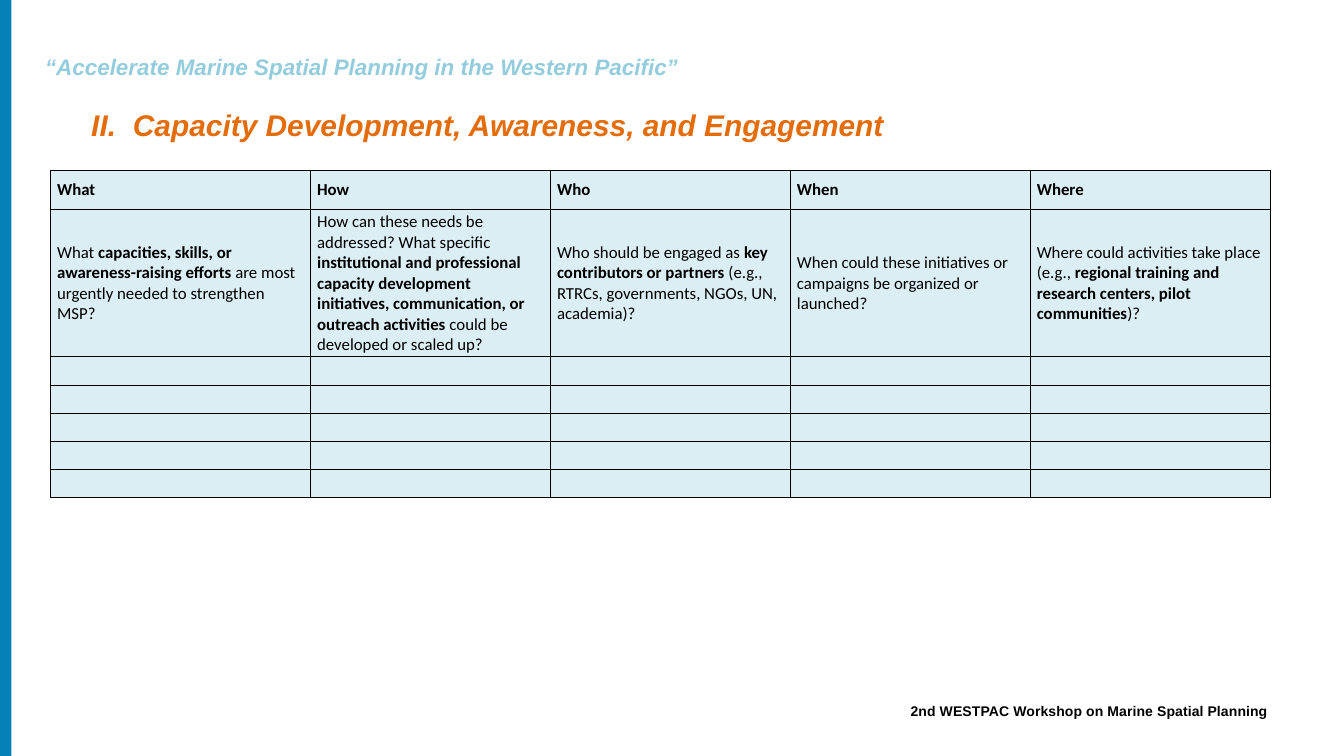
from dataclasses import dataclass

from lxml.etree import SubElement
from pptx import Presentation
from pptx.dml.color import RGBColor
from pptx.enum.shapes import MSO_SHAPE
from pptx.enum.text import MSO_ANCHOR, MSO_AUTO_SIZE, PP_ALIGN
from pptx.oxml.ns import qn
from pptx.slide import Slide
from pptx.table import _Cell
from pptx.text.text import _Paragraph
from pptx.util import Emu, Pt

EMU_PER_PX = 9144  # 100 px to the inch
BLACK = "000000"
COLUMN_WIDTHS = [387, 357, 357, 357, 357]
HEADER_HEIGHT, QUESTION_HEIGHT, EMPTY_HEIGHT = 58, 219, 42
EMPTY_ROWS = 5
CELL_FILL = "DBEEF4"


@dataclass(frozen=True)
class Style:
    size: int
    color: str = BLACK
    font: str = "Arial"
    bold: bool = True
    italic: bool = False
    spacing: int = 0  # hundredths of a point


@dataclass(frozen=True)
class Label:
    text: str
    left: int
    top: int
    width: int
    height: int
    style: Style
    align: PP_ALIGN = PP_ALIGN.LEFT
    anchor: MSO_ANCHOR = MSO_ANCHOR.TOP
    inset_x: int = 0
    inset_y: int = 0
    tab_stop: int = 0


@dataclass(frozen=True)
class Topic:
    """One table column; every second part of the question is bold."""
    heading: str
    question: tuple[str, ...]


LABELS = [
    Label("2nd WESTPAC Workshop on Marine Spatial Planning",
          1019, 1046, 868, 25, Style(15, spacing=10),
          align=PP_ALIGN.RIGHT, anchor=MSO_ANCHOR.MIDDLE),
    Label("“Accelerate Marine Spatial Planning in the Western Pacific”",
          67, 79, 1342, 40, Style(24, "93CDDD", italic=True)),
    Label("II.\tCapacity Development, Awareness, and Engagement",
          126, 154, 1224, 64, Style(32, "E46C0A", italic=True),
          inset_x=10, inset_y=5, tab_stop=62),
]

TOPICS = [
    Topic("What", ("What ", "capacities, skills, or awareness-raising efforts",
                   " are most urgently needed to strengthen MSP?")),
    Topic("How", ("How can these needs be addressed? What specific ",
                  "institutional and professional capacity development initiatives, "
                  "communication, or outreach activities ",
                  "could be developed or scaled up?")),
    Topic("Who", ("Who should be engaged as ", "key contributors or partners",
                  " (e.g., RTRCs, governments, NGOs, UN, academia)?")),
    Topic("When", ("When could these initiatives or campaigns be organized or launched?",)),
    Topic("Where", ("Where could activities take place (e.g., ",
                    "regional training and research centers, pilot communities", ")?")),
]


def px(length: int) -> Emu:
    return Emu(length * EMU_PER_PX)


def rgb(color: str) -> RGBColor:
    return RGBColor.from_string(color)


def add_span(para: _Paragraph, text: str, style: Style) -> None:
    span = para.add_run()
    span.text = text
    font = span.font
    font.name, font.size = style.font, Pt(style.size)
    font.bold, font.italic = style.bold, style.italic
    font.color.rgb = rgb(style.color)
    if style.spacing:
        span._r.get_or_add_rPr().set("spc", str(style.spacing))


def add_label(slide: Slide, label: Label) -> None:
    box = slide.shapes.add_textbox(px(label.left), px(label.top), px(label.width), px(label.height))
    frame = box.text_frame
    frame.word_wrap = True
    frame.auto_size = MSO_AUTO_SIZE.SHAPE_TO_FIT_TEXT
    frame.vertical_anchor = label.anchor
    frame.margin_left = frame.margin_right = px(label.inset_x)
    frame.margin_top = frame.margin_bottom = px(label.inset_y)
    para = frame.paragraphs[0]
    para.alignment = label.align
    if label.tab_stop:
        tabs = SubElement(para._p.get_or_add_pPr(), qn("a:tabLst"))
        SubElement(tabs, qn("a:tab"), pos=str(px(label.tab_stop)), algn="l")
    add_span(para, label.text, label.style)


def format_cell(cell: _Cell) -> None:
    cell.vertical_anchor = MSO_ANCHOR.MIDDLE
    cell.margin_top = cell.margin_bottom = px(2)
    properties = cell._tc.get_or_add_tcPr()
    for side in ("lnL", "lnR", "lnT", "lnB"):
        line = SubElement(properties, qn(f"a:{side}"), w=str(Pt(1)))
        SubElement(SubElement(line, qn("a:solidFill")), qn("a:srgbClr"), val=BLACK)
    cell.fill.solid()
    cell.fill.fore_color.rgb = rgb(CELL_FILL)


def add_topic_table(slide: Slide) -> None:
    heights = [HEADER_HEIGHT, QUESTION_HEIGHT] + [EMPTY_HEIGHT] * EMPTY_ROWS
    table = slide.shapes.add_table(len(heights), len(TOPICS), px(75), px(254),
                                   px(sum(COLUMN_WIDTHS)), px(sum(heights))).table
    table.first_row = table.horz_banding = False
    for column, width in zip(table.columns, COLUMN_WIDTHS):
        column.width = px(width)
    for row, height in zip(table.rows, heights):
        row.height = px(height)
    for cell in table.iter_cells():
        format_cell(cell)

    plain, strong = Style(18, font="Calibri", bold=False), Style(18, font="Calibri")
    for index, topic in enumerate(TOPICS):
        add_span(table.cell(0, index).text_frame.paragraphs[0], topic.heading, strong)
        para = table.cell(1, index).text_frame.paragraphs[0]
        for position, part in enumerate(topic.question):
            add_span(para, part, strong if position % 2 else plain)


def add_side_bar(slide: Slide) -> None:
    bar = slide.shapes.add_shape(MSO_SHAPE.RECTANGLE, px(0), px(0), px(17), px(1125))
    bar.shadow.inherit = False
    bar.fill.solid()
    bar.fill.fore_color.rgb = rgb("0581B8")
    bar.line.fill.background()


def main() -> None:
    deck = Presentation()
    deck.slide_width, deck.slide_height = px(2000), px(1125)
    page = deck.slides.add_slide(deck.slide_layouts[6])
    add_side_bar(page)
    add_topic_table(page)
    for label in LABELS:
        add_label(page, label)
    deck.save("out.pptx")


if __name__ == "__main__":
    main()
